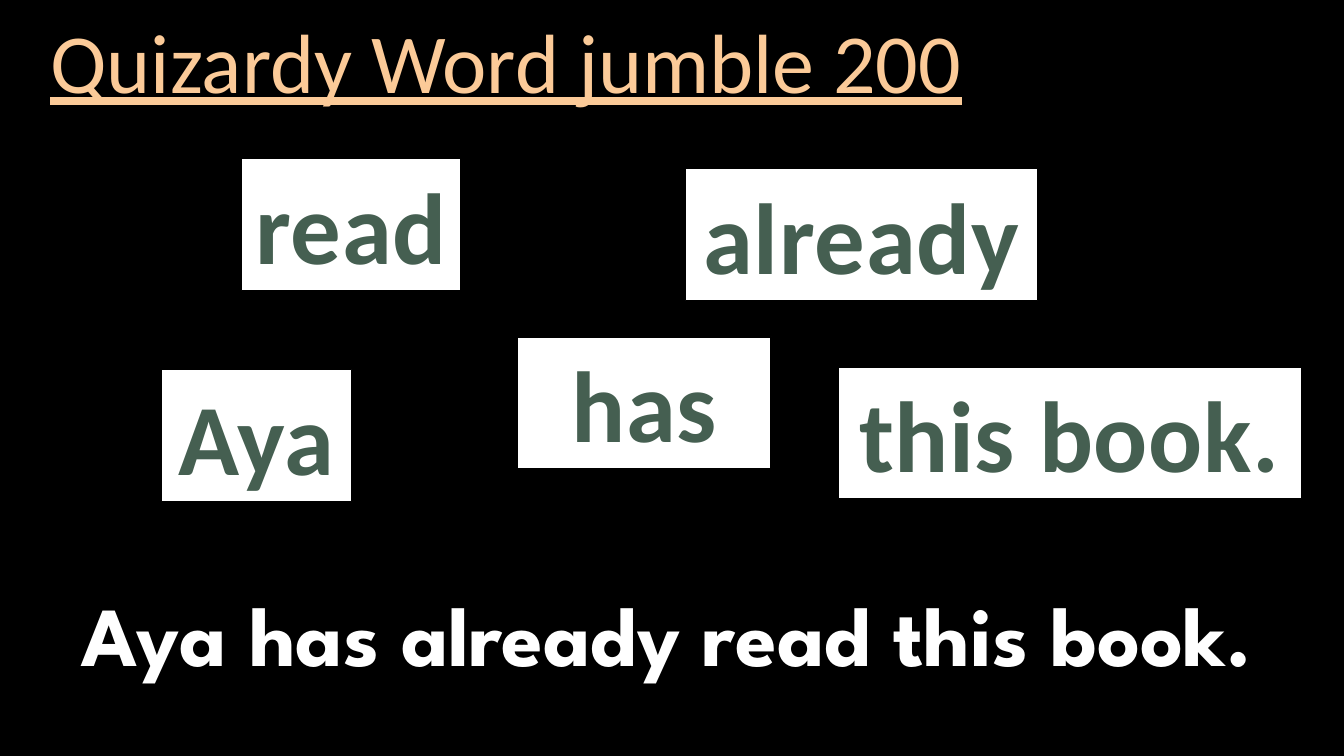
from pptx import Presentation
from pptx.dml.color import RGBColor
from pptx.enum.shapes import MSO_SHAPE
from pptx.enum.text import MSO_ANCHOR, MSO_AUTO_SIZE, PP_ALIGN
from pptx.util import Pt

BLACK = RGBColor(0x00, 0x00, 0x00)
WHITE = RGBColor(0xFF, 0xFF, 0xFF)
PEACH = RGBColor(0xFB, 0xCA, 0x98)
GREEN = RGBColor(0x45, 0x5F, 0x51)
RECTANGLE = MSO_SHAPE.RECTANGLE
TOP, MIDDLE = MSO_ANCHOR.TOP, MSO_ANCHOR.MIDDLE
NO_FIT, GROW = MSO_AUTO_SIZE.NONE, MSO_AUTO_SIZE.SHAPE_TO_FIT_TEXT
LEFT, CENTER = PP_ALIGN.LEFT, PP_ALIGN.CENTER
TITLE_ONLY = 5
CARD_HEIGHT = 94.3


def write(shape, text, font_name, size, color, alignment):
    paragraph = shape.text_frame.paragraphs[0]
    paragraph.alignment = alignment
    run = paragraph.add_run()
    run.text = text
    run.font.name = font_name
    run.font.size = Pt(size)
    run.font.color.rgb = color
    return run


presentation = Presentation()
presentation.slide_width = Pt(960)
presentation.slide_height = Pt(540)
slide = presentation.slides.add_slide(presentation.slide_layouts[TITLE_ONLY])
slide.background.fill.solid()
slide.background.fill.fore_color.rgb = BLACK

title = slide.shapes.title
title.left, title.top, title.width, title.height = Pt(28.8), Pt(11.5), Pt(820), Pt(71.3)
title.text_frame.vertical_anchor = MIDDLE
title.text_frame.auto_size = NO_FIT
title.text_frame.paragraphs[0].line_spacing = 0.9
title_run = write(title, "Quizardy Word jumble 200", "Calibri", 60, PEACH, LEFT)
title_run.font.underline = True

word_cards = [
    ("read", 172.4, 113.2, 156.8, False),
    ("already", 489.6, 120.4, 251.5, False),
    ("has", 369.6, 240.6, 181.2, True),
    ("this book.", 598.6, 262.2, 331, False),
    ("Aya", 115.4, 263.8, 135.8, False),
]
for word, left, top, width, wraps in word_cards:
    card = slide.shapes.add_shape(RECTANGLE, Pt(left), Pt(top), Pt(width), Pt(CARD_HEIGHT))
    card.shadow.inherit = False
    card.fill.solid()
    card.fill.fore_color.rgb = WHITE
    card.line.color.rgb = BLACK
    card.line.width = Pt(1)
    card.text_frame.word_wrap = wraps
    card.text_frame.auto_size = GROW
    card.text_frame.vertical_anchor = TOP
    word_run = write(card, word, "Calibri", 72, GREEN, CENTER)
    word_run.font.bold = True
    word_run.font._element.set("spc", "50")

answer = slide.shapes.add_textbox(Pt(0), Pt(412.6), Pt(953.3), Pt(80))
answer.text_frame.word_wrap = False
answer.text_frame.auto_size = GROW
answer_run = write(answer, "Aya has already read this book.", "League Spartan", 60, WHITE, CENTER)
answer_run.font.bold = True

presentation.save("out.pptx")
